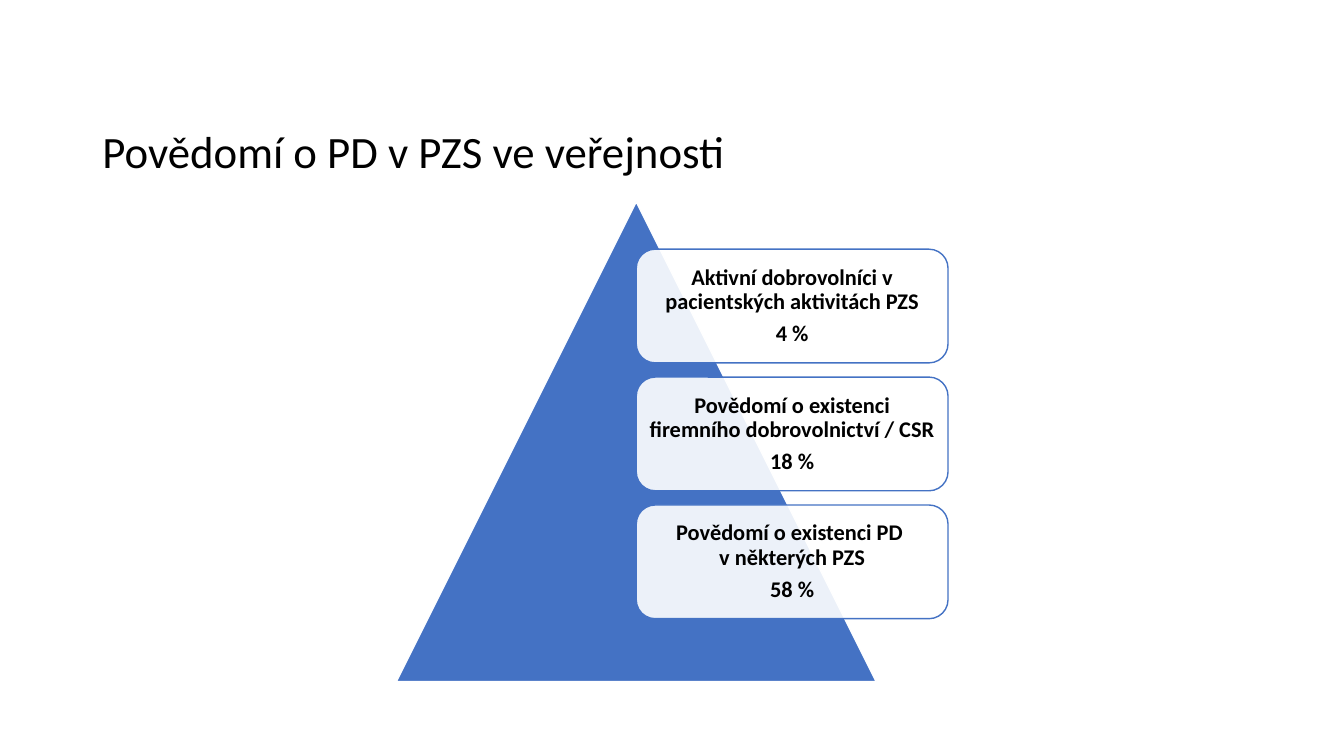
from lxml.etree import SubElement
from pptx import Presentation
from pptx.dml.color import RGBColor
from pptx.enum.shapes import MSO_SHAPE
from pptx.enum.text import MSO_ANCHOR, PP_ALIGN
from pptx.oxml.ns import qn
from pptx.util import Pt

COLORS = {"blue": "4472C4", "white": "FFFFFF", "black": "000000"}

AWARENESS_LEVELS = [
    ("Aktivní dobrovolníci v pacientských aktivitách PZS", "4 %"),
    ("Povědomí o existenci firemního dobrovolnictví / CSR", "18 %"),
    ("Povědomí o existenci PD \vv některých PZS", "58 %"),
]


class SlideBuilder:
    font_name = "Calibri"
    line_width = 1

    def __init__(self, slide):
        self.slide = slide

    def color(self, name):
        return RGBColor.from_string(COLORS[name])

    def set_text(self, shape, lines, size, bold=False, align=PP_ALIGN.LEFT,
                 space_after=0, inset=None):
        frame = shape.text_frame
        frame_format = {"word_wrap": True, "vertical_anchor": MSO_ANCHOR.MIDDLE}
        if inset is not None:
            for side in ("left", "top", "right", "bottom"):
                frame_format[f"margin_{side}"] = Pt(inset)
        for name, value in frame_format.items():
            setattr(frame, name, value)
        paragraph_format = {"alignment": align, "line_spacing": 0.9,
                            "space_after": Pt(space_after)}
        font_format = {"name": self.font_name, "size": Pt(size), "bold": bold}
        for index, line in enumerate(lines):
            paragraph = frame.add_paragraph() if index else frame.paragraphs[0]
            paragraph.text = line
            for name, value in paragraph_format.items():
                setattr(paragraph, name, value)
            for name, value in font_format.items():
                setattr(paragraph.font, name, value)
            paragraph.font.color.rgb = self.color("black")

    def add_title(self, text, left, top, width, height):
        box = self.slide.shapes.add_textbox(Pt(left), Pt(top), Pt(width), Pt(height))
        self.set_text(box, [text], size=32)

    def add_shape(self, kind, left, top, width, height, fill, line, opacity=100):
        shape = self.slide.shapes.add_shape(
            kind, Pt(left), Pt(top), Pt(width), Pt(height))
        shape.shadow.inherit = False
        shape.fill.solid()
        shape.fill.fore_color.rgb = self.color(fill)
        shape.line.color.rgb = self.color(line)
        shape.line.width = Pt(self.line_width)
        if opacity < 100:
            fill_color = shape.element.spPr.find(qn("a:solidFill"))[0]
            SubElement(fill_color, qn("a:alpha"), val=str(opacity * 1000))
        return shape

    def add_card(self, lines, left, top, width, height):
        card = self.add_shape(MSO_SHAPE.ROUNDED_RECTANGLE, left, top, width, height,
                              fill="white", line="blue", opacity=90)
        self.set_text(card, lines, size=16, bold=True, align=PP_ALIGN.CENTER,
                      space_after=5.6, inset=4.8)


def main():
    presentation = Presentation()
    presentation.slide_width = Pt(960)
    presentation.slide_height = Pt(540)
    builder = SlideBuilder(presentation.slides.add_slide(presentation.slide_layouts[6]))

    builder.add_title("Povědomí o PD v PZS ve veřejnosti", 66, 87, 828, 46)

    pyramid_left, pyramid_top, pyramid_size = 283.2, 144.2, 342.6
    builder.add_shape(MSO_SHAPE.ISOSCELES_TRIANGLE, pyramid_left, pyramid_top,
                      pyramid_size, pyramid_size, fill="blue", line="white")

    card_left = pyramid_left + pyramid_size / 2
    card_width = pyramid_size * 0.65
    card_top, card_height = 178, 81.2
    card_pitch = card_height * 9 / 8
    for index, lines in enumerate(AWARENESS_LEVELS):
        builder.add_card(lines, card_left, card_top + index * card_pitch,
                         card_width, card_height)

    presentation.save("out.pptx")


if __name__ == "__main__":
    main()
